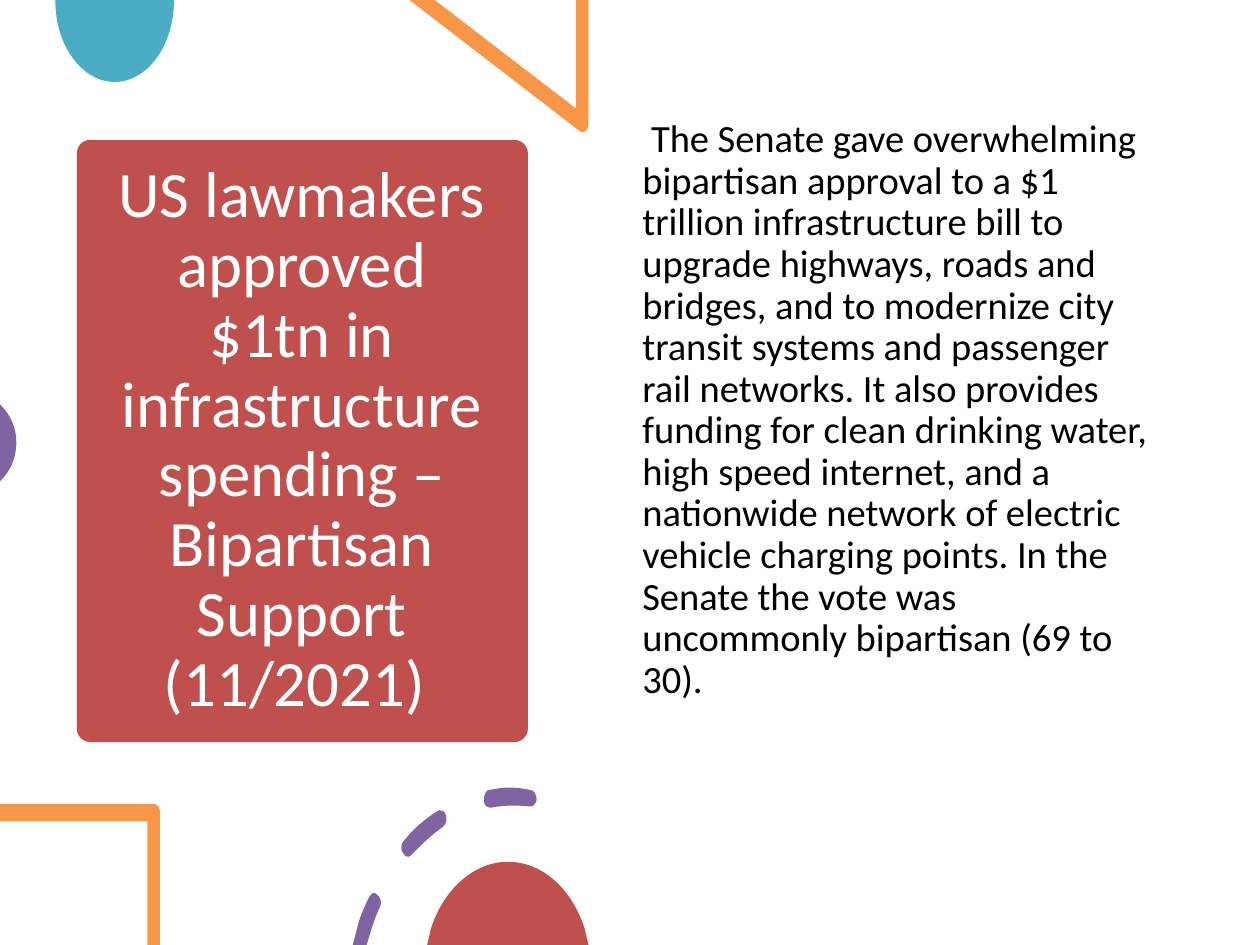
from lxml.etree import SubElement
from pptx import Presentation
from pptx.dml.color import RGBColor
from pptx.enum.shapes import MSO_SHAPE as Shape
from pptx.enum.text import MSO_ANCHOR as Anchor, PP_ALIGN as Align
from pptx.oxml.ns import qn
from pptx.util import Inches, Pt

COLORS = {"red": "C0504D", "teal": "4BACC6", "orange": "F79646",
          "purple": "8064A2", "white": "FFFFFF", "black": "000000"}
COLUMNS, ROWS = 10, 7.5
UNITS_PER_CELL = 1000

TITLE = ("US lawmakers approved $1tn in infrastructure spending – "
         "Bipartisan Support\n(11/2021) ")
BODY = (" The Senate gave overwhelming bipartisan approval to a $1 trillion "
        "infrastructure bill to upgrade highways, roads and bridges, and to "
        "modernize city transit systems and passenger rail networks. It also "
        "provides funding for clean drinking water, high speed internet, and "
        "a nationwide network of electric vehicle charging points. In the "
        "Senate the vote was uncommonly bipartisan (69 to 30).")

TEAL_DISC = [(1.38, 0), (0.44, 0), (0.44, 0.01),
             (0.44, 0.36, 0.65, 0.65, 0.91, 0.65),
             (1.17, 0.65, 1.38, 0.36, 1.38, 0.01)]
TRIANGLE = [(4.67, 0), (4.57, 0), (4.57, 0.86), (3.45, 0), (3.25, 0),
            (4.6, 1.04), (4.61, 1.05, 4.61, 1.05, 4.62, 1.05),
            (4.65, 1.05, 4.67, 1.02, 4.67, 0.98)]
PURPLE_DISC = [(0, 3.21), (0, 3.82), (0.01, 3.81),
               (0.08, 3.74, 0.13, 3.64, 0.13, 3.51),
               (0.13, 3.39, 0.08, 3.29, 0.01, 3.22)]
CORNER = [(1.22, 6.38), (0, 6.38), (0, 6.52), (1.17, 6.52), (1.17, 7.5),
          (1.27, 7.5), (1.27, 6.45), (1.27, 6.41, 1.25, 6.38, 1.22, 6.38)]
LOW_DASH = [(2.98, 7.09), (2.96, 7.08, 2.94, 7.1, 2.93, 7.12),
            (2.9, 7.18, 2.87, 7.25, 2.85, 7.31), (2.8, 7.5), (2.91, 7.5),
            (2.95, 7.37), (2.97, 7.31, 2.99, 7.25, 3.02, 7.19),
            (3.03, 7.16, 3.02, 7.11, 2.99, 7.1),
            (2.99, 7.09, 2.98, 7.09, 2.98, 7.09)]
MIDDLE_DASH = [(3.49, 6.43), (3.48, 6.43, 3.48, 6.43, 3.47, 6.44),
               (3.37, 6.5, 3.28, 6.58, 3.2, 6.68),
               (3.18, 6.7, 3.18, 6.75, 3.2, 6.77),
               (3.21, 6.79, 3.22, 6.8, 3.24, 6.8), (3.24, 6.8),
               (3.25, 6.8, 3.26, 6.79, 3.27, 6.78),
               (3.35, 6.7, 3.43, 6.62, 3.52, 6.56),
               (3.54, 6.54, 3.55, 6.5, 3.54, 6.47),
               (3.53, 6.44, 3.51, 6.43, 3.49, 6.43)]
TOP_DASH = [(4.05, 6.25), (3.99, 6.25, 3.94, 6.26, 3.88, 6.27),
            (3.86, 6.27, 3.84, 6.31, 3.84, 6.35),
            (3.84, 6.38, 3.86, 6.41, 3.89, 6.41),
            (3.89, 6.41, 3.9, 6.41, 3.9, 6.41),
            (4, 6.39, 4.1, 6.39, 4.2, 6.4),
            (4.23, 6.41, 4.25, 6.38, 4.26, 6.35),
            (4.26, 6.31, 4.24, 6.27, 4.21, 6.27),
            (4.21, 6.27, 4.21, 6.27, 4.21, 6.27),
            (4.16, 6.26, 4.1, 6.25, 4.05, 6.25)]
RED_DISC = [(4.03, 6.84), (3.76, 6.84, 3.52, 7.06, 3.42, 7.37),
            (3.39, 7.5), (4.67, 7.5), (4.64, 7.37),
            (4.54, 7.06, 4.31, 6.84, 4.03, 6.84)]


def to_units(contour):
    """Scale corners (x, y) and cubic curves (six numbers) to whole units."""
    return [tuple(round(value * UNITS_PER_CELL) for value in segment)
            for segment in contour]


def bend(line, segment, left, top):
    """Turn a straight outline segment into a cubic curve."""
    line.tag = qn("a:cubicBezTo")
    for point in list(line):
        line.remove(point)
    for x, y in zip(segment[::2], segment[1::2]):
        SubElement(line, qn("a:pt"), x=str(x - left), y=str(y - top))


class SlidePainter:
    """Holds the style and the current slide; lengths are grid cells."""

    font_name = "Calibri"
    line_spacing = 0.9

    def __init__(self, presentation):
        self.slide = presentation.slides.add_slide(presentation.slide_layouts[6])
        self.cell = presentation.slide_width // COLUMNS

    def cells(self, *lengths):
        return [round(length * self.cell) for length in lengths]

    def paint(self, shape, color):
        shape.shadow.inherit = False
        shape.fill.solid()
        shape.fill.fore_color.rgb = RGBColor.from_string(COLORS[color])
        shape.line.fill.background()

    def panel(self, box, color, rounding):
        shape = self.slide.shapes.add_shape(Shape.ROUNDED_RECTANGLE, *self.cells(*box))
        shape.adjustments[0] = rounding
        self.paint(shape, color)

    def outline(self, color, *contours):
        contours = [to_units(contour) for contour in contours]
        anchors = [[segment[-2:] for segment in contour] for contour in contours]
        builder = self.slide.shapes.build_freeform(
            *anchors[0][0], scale=self.cell / UNITS_PER_CELL)
        for index, points in enumerate(anchors):
            if index:
                builder.move_to(*points[0])
            builder.add_line_segments(points[1:])
        shape = builder.convert_to_shape()
        left, top = (min(point[axis] for points in anchors for point in points)
                     for axis in (0, 1))
        segments = [segment for contour in contours for segment in contour[1:]]
        lines = list(shape.element.iter(qn("a:lnTo")))
        for line, segment in zip(lines, segments):
            if len(segment) == 6:
                bend(line, segment, left, top)
        self.paint(shape, color)

    def text(self, box, words, size, color, align=Align.LEFT, anchor=Anchor.TOP):
        frame = self.slide.shapes.add_textbox(*self.cells(*box)).text_frame
        frame.word_wrap = True
        frame.vertical_anchor = anchor
        paragraph = frame.paragraphs[0]
        paragraph.text = words
        paragraph.alignment = align
        paragraph.line_spacing = self.line_spacing
        paragraph.font.name = self.font_name
        paragraph.font.size = Pt(size)
        paragraph.font.color.rgb = RGBColor.from_string(COLORS[color])


def main():
    presentation = Presentation()
    presentation.slide_width = Inches(COLUMNS)
    presentation.slide_height = Inches(ROWS)
    painter = SlidePainter(presentation)
    painter.panel((0.61, 1.11, 3.58, 4.78), "red", 0.03)
    painter.text((0.78, 1.22, 3.23, 4.56), TITLE, 37, "white",
                 Align.CENTER, Anchor.MIDDLE)
    painter.outline("teal", TEAL_DISC)
    painter.outline("orange", TRIANGLE)
    painter.outline("purple", PURPLE_DISC)
    painter.text((5, 0.9, 4.31, 5.35), BODY, 22, "black")
    painter.outline("orange", CORNER)
    painter.outline("purple", LOW_DASH, MIDDLE_DASH, TOP_DASH)
    painter.outline("red", RED_DISC)
    presentation.save("out.pptx")


if __name__ == "__main__":
    main()
